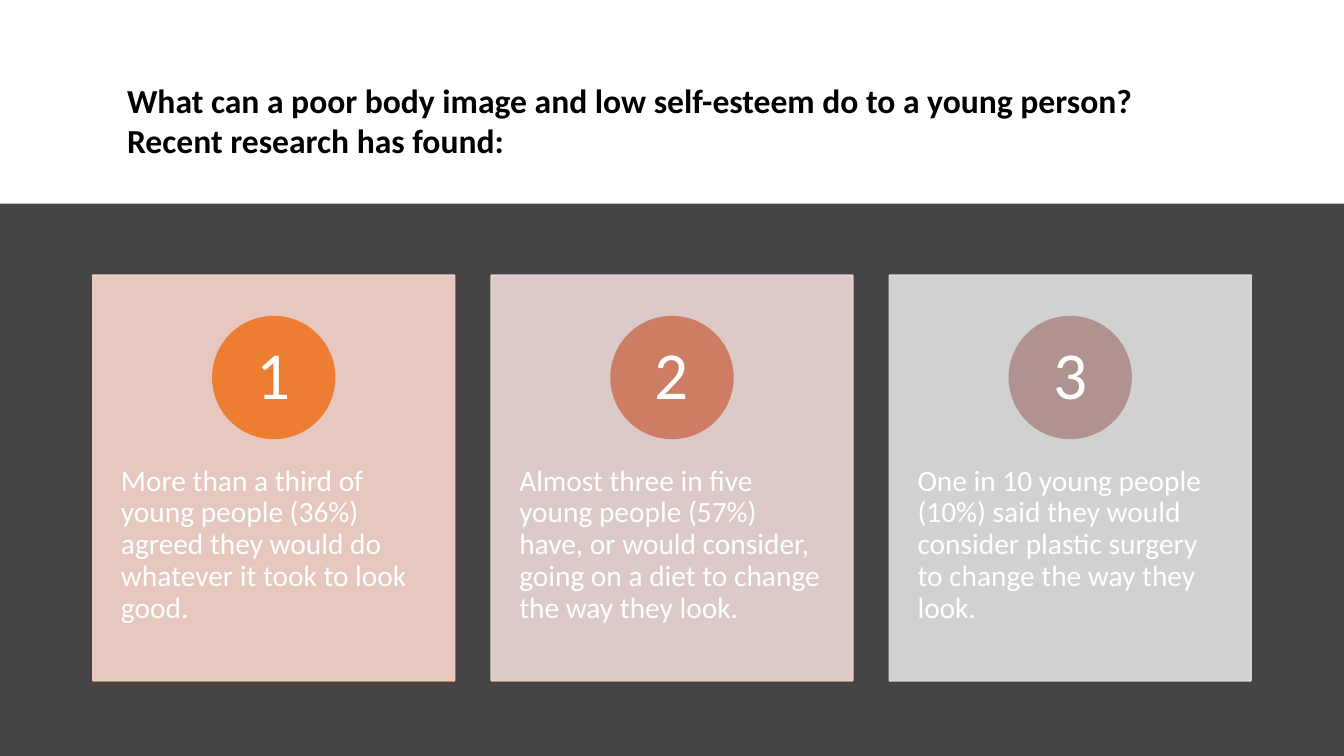
"""Build a slide with three numbered findings on body image and self-esteem."""
from lxml import etree
from pptx import Presentation
from pptx.dml.color import RGBColor
from pptx.enum.shapes import MSO_CONNECTOR, MSO_SHAPE
from pptx.enum.text import MSO_ANCHOR, PP_ALIGN
from pptx.oxml.ns import qn
from pptx.util import Inches, Pt

RECTANGLE, OVAL = MSO_SHAPE.RECTANGLE, MSO_SHAPE.OVAL
STRAIGHT = MSO_CONNECTOR.STRAIGHT
TOP, MIDDLE = MSO_ANCHOR.TOP, MSO_ANCHOR.MIDDLE
LEFT, CENTER = PP_ALIGN.LEFT, PP_ALIGN.CENTER

COLORS = {
    "background": "454545", "white": "FFFFFF", "black": "000000",
    "card1": "F8D7CE", "circle1": "ED7D31", "rule1": "DC7A4B",
    "card2": "EDD9D7", "circle2": "CC7D64", "rule2": "BD867B",
    "card3": "E1E1E1", "circle3": "B09391", "rule3": "A5A5A5",
}
FINDINGS = [
    "More than a third of young people (36%) agreed they would do whatever it took to look good.",
    "Almost three in five young people (57%) have, or would consider, "
    "going on a diet to change the way they look.",
    "One in 10 young people (10%) said they would consider plastic surgery "
    "to change the way they look.",
]
CARD_LEFT, CARD_TOP, CARD_WIDTH, CARD_HEIGHT = 0.92, 2.73, 3.59, 4.02
CARD_STEP = 3.95
CIRCLE_SIZE = 1.21
RULE_Y = 6.76


def write(shape, *lines, size, color, bold=False, align=LEFT, anchor=TOP,
          spacing=1.0, inset=(0.1, 0.05)):
    """Write one paragraph per line in a shape with the given format."""
    frame = shape.text_frame
    frame.word_wrap = True
    frame.vertical_anchor = anchor
    frame.margin_left = frame.margin_right = Inches(inset[0])
    frame.margin_top = frame.margin_bottom = Inches(inset[1])
    frame.text = "\n".join(lines)
    for paragraph in frame.paragraphs:
        paragraph.alignment = align
        paragraph.line_spacing = spacing
        paragraph.font.name = "Calibri"
        paragraph.font.size = Pt(size)
        paragraph.font.bold = bold
        paragraph.font.color.rgb = RGBColor.from_string(COLORS[color])


def add_block(kind, left, top, width, height, color, opacity=100):
    """Add a flat shape whose outline matches its fill."""
    block = slide.shapes.add_shape(
        kind, Inches(left), Inches(top), Inches(width), Inches(height))
    block.shadow.inherit = False
    block.fill.solid()
    block.fill.fore_color.rgb = RGBColor.from_string(COLORS[color])
    block.line.color.rgb = RGBColor.from_string(COLORS[color])
    block.line.width = Pt(1)
    if opacity < 100:
        for tint in block.element.spPr.iter(qn("a:srgbClr")):
            etree.SubElement(tint, qn("a:alpha"), val=str(opacity * 1000))
    return block


deck = Presentation()
deck.slide_width, deck.slide_height = Inches(13.33), Inches(7.5)
slide = deck.slides.add_slide(deck.slide_layouts[5])
slide.background.fill.solid()
slide.background.fill.fore_color.rgb = RGBColor.from_string(COLORS["background"])

heading_band = add_block(RECTANGLE, 0, -0.01, 13.33, 2.03, "white")
heading_band.line.fill.background()

heading = slide.shapes.title
heading.left, heading.top = Inches(1.16), Inches(0.74)
heading.width, heading.height = Inches(10.36), Inches(0.91)
write(heading, "What can a poor body image and low self-esteem do to a young person?",
      "Recent research has found:", size=24, color="black", bold=True)
heading.element.addprevious(heading_band.element)

for number, finding in enumerate(FINDINGS, start=1):
    left = CARD_LEFT + (number - 1) * CARD_STEP
    add_block(RECTANGLE, left, CARD_TOP, CARD_WIDTH, CARD_HEIGHT, f"card{number}", opacity=90)

    statement = slide.shapes.add_textbox(
        Inches(left), Inches(4.26), Inches(CARD_WIDTH), Inches(2.41))
    write(statement, finding, size=21, color="white", spacing=0.9, inset=(0.28, 0.36))

    circle_left = left + (CARD_WIDTH - CIRCLE_SIZE) / 2
    circle = add_block(OVAL, circle_left, 3.14, CIRCLE_SIZE, CIRCLE_SIZE, f"circle{number}")
    write(circle, str(number), size=48, color="white", align=CENTER, anchor=MIDDLE,
          spacing=0.9, inset=(0.09, 0.01))

    rule = slide.shapes.add_connector(
        STRAIGHT, Inches(left), Inches(RULE_Y), Inches(left + CARD_WIDTH), Inches(RULE_Y))
    rule.line.color.rgb = RGBColor.from_string(COLORS[f"rule{number}"])
    rule.line.width = Pt(1)
    etree.SubElement(rule.element.spPr, qn("a:effectLst"))

deck.save("out.pptx")
